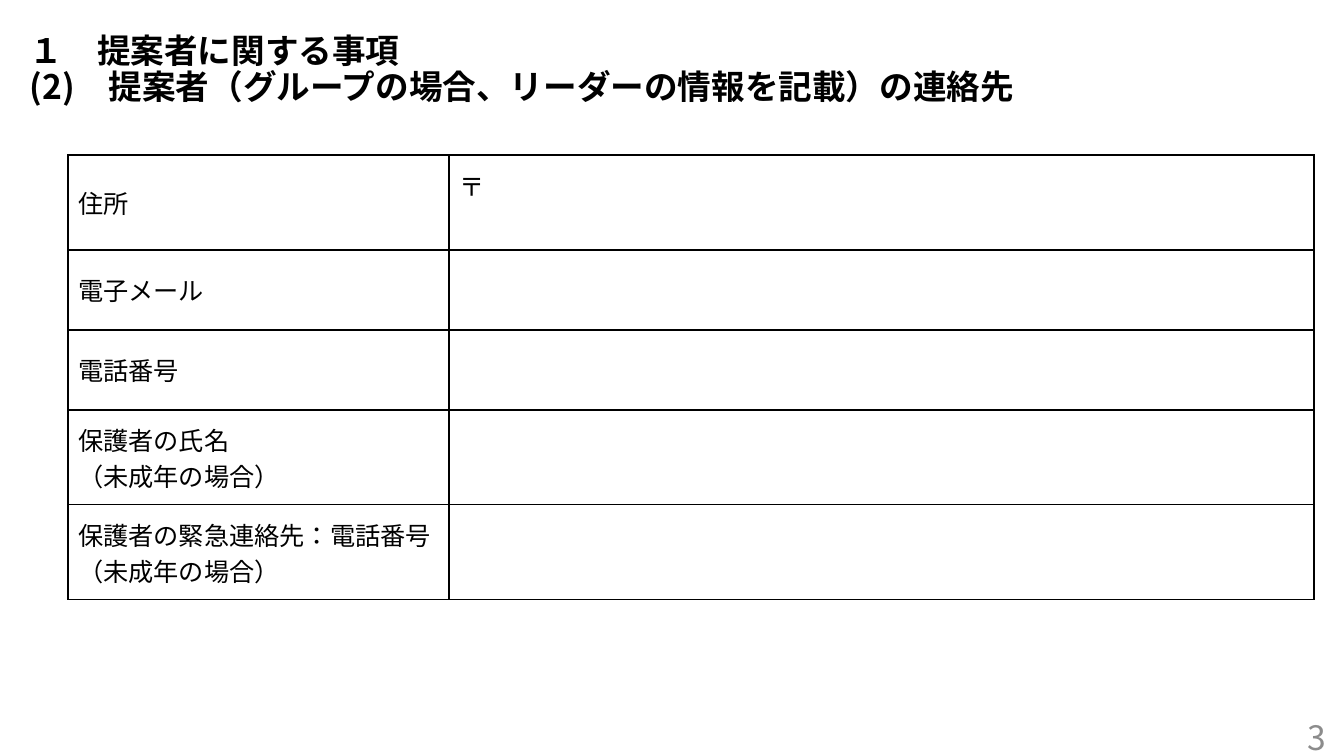
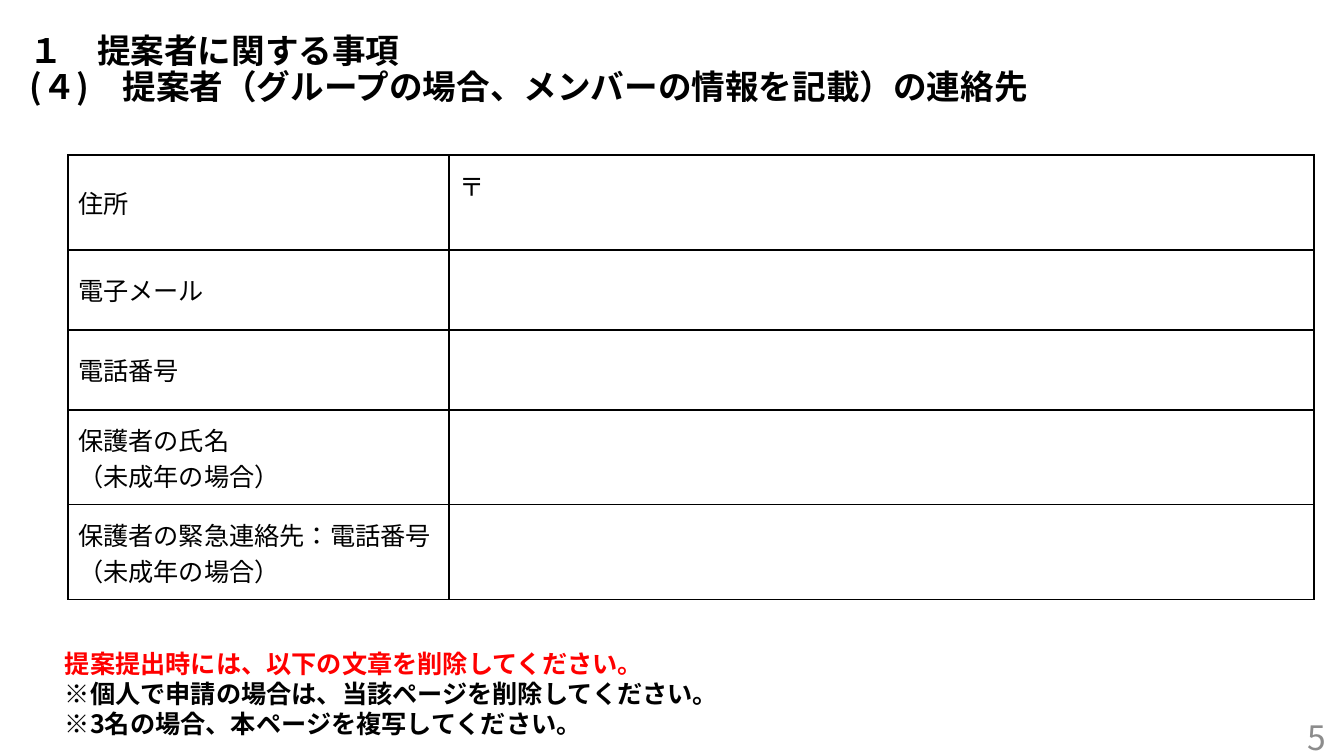
from dataclasses import dataclass

from pptx import Presentation
from pptx.dml.color import RGBColor
from pptx.enum.lang import MSO_LANGUAGE_ID
from pptx.enum.text import MSO_ANCHOR, PP_ALIGN
from pptx.oxml import parse_xml
from pptx.oxml.ns import nsdecls, qn
from pptx.util import Pt

JAPANESE = MSO_LANGUAGE_ID.JAPANESE
TOP, MIDDLE = MSO_ANCHOR.TOP, MSO_ANCHOR.MIDDLE
LEFT, RIGHT = PP_ALIGN.LEFT, PP_ALIGN.RIGHT

SLIDE_W, SLIDE_H = 1344, 756
SCALE = 12192000 / SLIDE_W

COLUMNS = [381, 865]
SHORT_ROW, TALL_ROW = 80, 95
POSTAL_MARK_TOP = 12
FIELDS = [
    (TALL_ROW, ["住所"], ["〒"]),
    (SHORT_ROW, ["電子メール"], []),
    (SHORT_ROW, ["電話番号"], []),
    (TALL_ROW, ["保護者の氏名", "（未成年の場合）"], []),
    (TALL_ROW, ["保護者の緊急連絡先：電話番号", "（未成年の場合）"], []),
]


@dataclass(frozen=True)
class Theme:
    font: str = "Noto Sans CJK JP"
    ink: str = "000000"
    alert: str = "FF0000"
    muted: str = "8C8C8C"
    title_size: int = 24
    body_size: int = 18
    title_leading: float = 25.7
    note_leading: float = 21.6
    border: int = 1


def px(n):
    return round(n * SCALE)


class Deck:
    def __init__(self, theme):
        self.theme = theme
        self.prs = Presentation()
        self.prs.slide_width, self.prs.slide_height = px(SLIDE_W), px(SLIDE_H)
        self.s = None

    def add_slide(self):
        self.s = self.prs.slides.add_slide(self.prs.slide_layouts[6])

    def fill_text(self, tf, lines, size, color=None, bold=False, align=LEFT, leading=None):
        """Put one paragraph per line into a text frame."""
        for i, line in enumerate(lines):
            p = tf.paragraphs[0] if i == 0 else tf.add_paragraph()
            p.alignment = align
            if leading:
                p.line_spacing = Pt(leading)
            r = p.add_run()
            r.text = line
            formats = {"size": Pt(size), "bold": bold, "name": self.theme.font,
                       "language_id": JAPANESE}
            for name, value in formats.items():
                setattr(r.font, name, value)
            r.font.color.rgb = RGBColor.from_string(color or self.theme.ink)
            r.font._element.find(qn("a:latin")).addnext(parse_xml(
                f'<a:ea {nsdecls("a")} typeface="{self.theme.font}"/>'))

    def text_box(self, x, y, w, h, anchor=MIDDLE):
        tf = self.s.shapes.add_textbox(px(x), px(y), px(w), px(h)).text_frame
        tf.word_wrap = True
        tf.vertical_anchor = anchor
        return tf

    def title(self, *lines):
        t = self.theme
        self.fill_text(self.text_box(20, 26, 1160, 88), lines, t.title_size,
                       bold=True, leading=t.title_leading)

    def page_number(self, number):
        t = self.theme
        self.fill_text(self.text_box(1137, 718, 199, 38), [str(number)],
                       t.title_size, t.muted, align=RIGHT)

    def notes(self, *lines):
        """Add bold notes, the first of them in the alert colour."""
        t = self.theme
        tf = self.text_box(55, 643, 1280, 102, TOP)
        self.fill_text(tf, lines, t.body_size, bold=True, leading=t.note_leading)
        tf.paragraphs[0].runs[0].font.color.rgb = RGBColor.from_string(t.alert)

    def form(self, fields):
        heights = [height for height, _, _ in fields]
        table = self.s.shapes.add_table(
            len(fields), len(COLUMNS), px(68), px(155),
            px(sum(COLUMNS)), px(sum(heights))).table
        table.first_row = table.horz_banding = False
        for column, width in zip(table.columns, COLUMNS):
            column.width = px(width)
        for row, (height, *texts) in zip(table.rows, fields):
            row.height = px(height)
            for cell, lines in zip(row.cells, texts):
                cell.vertical_anchor = MIDDLE
                self.fill_text(cell.text_frame, lines, self.theme.body_size)
                cell.fill.background()
                self.cell_borders(cell)
        postal_cell = table.cell(0, 1)
        postal_cell.vertical_anchor = TOP
        postal_cell.margin_top = px(POSTAL_MARK_TOP)

    def cell_borders(self, cell):
        tc_pr = cell._tc.get_or_add_tcPr()
        for i, side in enumerate(("lnL", "lnR", "lnT", "lnB")):
            tc_pr.insert(i, parse_xml(
                f'<a:{side} {nsdecls("a")} w="{Pt(self.theme.border)}"><a:solidFill>'
                f'<a:srgbClr val="{self.theme.ink}"/></a:solidFill></a:{side}>'))

    def contact_slide(self, heading, number):
        self.add_slide()
        self.title("１　提案者に関する事項", heading)
        self.form(FIELDS)
        self.page_number(number)


def main():
    deck = Deck(Theme())
    deck.contact_slide("(2)　提案者（グループの場合、リーダーの情報を記載）の連絡先", 3)
    deck.contact_slide("(４)　提案者（グループの場合、メンバーの情報を記載）の連絡先", 5)
    deck.notes("提案提出時には、以下の文章を削除してください。",
               "※個人で申請の場合は、当該ページを削除してください。",
               "※3名の場合、本ページを複写してください。")
    deck.prs.save("out.pptx")


if __name__ == "__main__":
    main()
